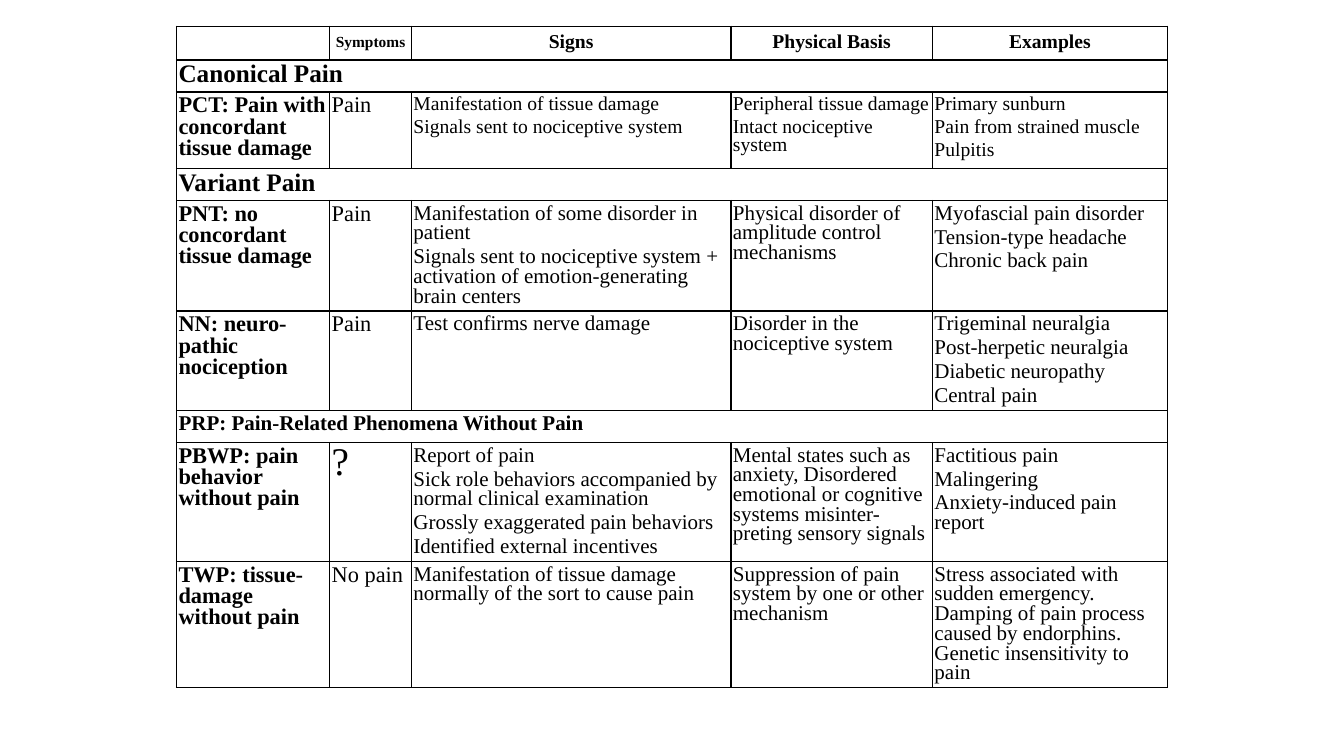
from lxml.etree import SubElement
from pptx import Presentation
from pptx.dml.color import RGBColor
from pptx.enum.text import MSO_ANCHOR as Anchor, PP_ALIGN as Align
from pptx.oxml import parse_xml
from pptx.oxml.ns import nsdecls, qn
from pptx.util import Cm, Pt

BLACK = RGBColor(0, 0, 0)
WHITE = RGBColor(255, 255, 255)
FONT = "Times New Roman"

HEADINGS = [("Symptoms", 11), ("Signs", 14), ("Physical Basis", 14), ("Examples", 14)]
SECTIONS = {1: ("Canonical Pain", 18), 3: ("Variant Pain", 18),
            6: ("PRP: Pain-Related Phenomena Without Pain", 15)}
CONDITIONS = {
    2: ("PCT: Pain with concordant tissue damage", "Pain",
        ["Manifestation of tissue damage", "Signals sent to nociceptive system"],
        ["Peripheral tissue damage", "Intact nociceptive system"],
        ["Primary sunburn", "Pain from strained muscle", "Pulpitis"]),
    4: ("PNT: no concordant tissue damage", "Pain",
        ["Manifestation of some disorder in patient",
         "Signals sent to nociceptive system + activation of emotion-generating brain centers"],
        ["Physical disorder of amplitude control mechanisms"],
        ["Myofascial pain disorder", "Tension-type headache", "Chronic back pain"]),
    5: ("NN: neuro-pathic nociception", "Pain",
        ["Test confirms nerve damage"],
        ["Disorder in the nociceptive system"],
        ["Trigeminal neuralgia", "Post-herpetic neuralgia", "Diabetic neuropathy", "Central pain"]),
    7: ("PBWP: pain behavior without pain", "?",
        ["Report of pain", "Sick role behaviors accompanied by normal clinical examination",
         "Grossly exaggerated pain behaviors", "Identified external incentives"],
        ["Mental states such as anxiety, Disordered emotional or cognitive systems "
         "misinter-preting sensory signals"],
        ["Factitious pain", "Malingering", "Anxiety-induced pain report"]),
    8: ("TWP: tissue-damage without pain", "No pain",
        ["Manifestation of tissue damage normally of the sort to cause pain"],
        ["Suppression of pain system by one or other mechanism"],
        ["Stress associated with sudden emergency. Damping of pain process caused by "
         "endorphins. Genetic insensitivity to pain"]),
}
COLUMN_WIDTHS = [3.86, 2.06, 8.05, 5.08, 5.92]
ROW_HEIGHTS = [0.85, 0.81, 1.92, 0.81, 2.77, 2.5, 0.81, 3, 3.18]


def write(cell, lines, size, bold=False, align=Align.LEFT, anchor=Anchor.TOP):
    cell.vertical_anchor = anchor
    for index, line in enumerate(lines):
        frame = cell.text_frame
        paragraph = frame.add_paragraph() if index else frame.paragraphs[0]
        paragraph.alignment = align
        paragraph.line_spacing = 0.85
        paragraph.space_after = Pt(3)
        run = paragraph.add_run()
        run.text = line
        run.font.name = FONT
        run.font.size = Pt(size)
        run.font.bold = bold
        run.font.color.rgb = BLACK


prs = Presentation()
prs.slide_width = Cm(33.87)
prs.slide_height = Cm(19.05)
slide = prs.slides.add_slide(prs.slide_layouts[6])

pain_table = slide.shapes.add_table(
    len(ROW_HEIGHTS), len(COLUMN_WIDTHS), Cm(4.45), Cm(0.66),
    Cm(sum(COLUMN_WIDTHS)), Cm(sum(ROW_HEIGHTS))).table
pain_table.first_row = False
pain_table.horz_banding = False
for column, width in zip(pain_table.columns, COLUMN_WIDTHS):
    column.width = Cm(width)
for row, height in zip(pain_table.rows, ROW_HEIGHTS):
    row.height = Cm(height)

for cell in pain_table.iter_cells():
    cell.margin_left = cell.margin_right = Cm(0.05)
    cell.margin_top = cell.margin_bottom = Cm(0.1)
    cell.fill.solid()
    cell.fill.fore_color.rgb = WHITE
    for position, side in enumerate(["lnL", "lnR", "lnT", "lnB"]):
        border = parse_xml(
            f'<a:{side} {nsdecls("a")} w="{Pt(1)}"><a:solidFill>'
            f'<a:srgbClr val="{BLACK}"/></a:solidFill></a:{side}>')
        cell._tc.get_or_add_tcPr().insert(position, border)

corner = pain_table.cell(0, 0).text_frame.paragraphs[0]
SubElement(corner._p, qn("a:endParaRPr"), sz="1100")
for column, (heading, size) in enumerate(HEADINGS, start=1):
    write(pain_table.cell(0, column), [heading], size, bold=True,
          align=Align.CENTER, anchor=Anchor.MIDDLE)

for row, (section, size) in SECTIONS.items():
    pain_table.cell(row, 0).merge(pain_table.cell(row, 4))
    write(pain_table.cell(row, 0), [section], size, bold=True)

for row, (condition, symptom, *details) in CONDITIONS.items():
    write(pain_table.cell(row, 0), [condition], 16, bold=True)
    write(pain_table.cell(row, 1), [symptom], 28 if symptom == "?" else 16)
    for column, lines in enumerate(details, start=2):
        write(pain_table.cell(row, column), lines, 14 if row == 2 else 15)

prs.save("out.pptx")
